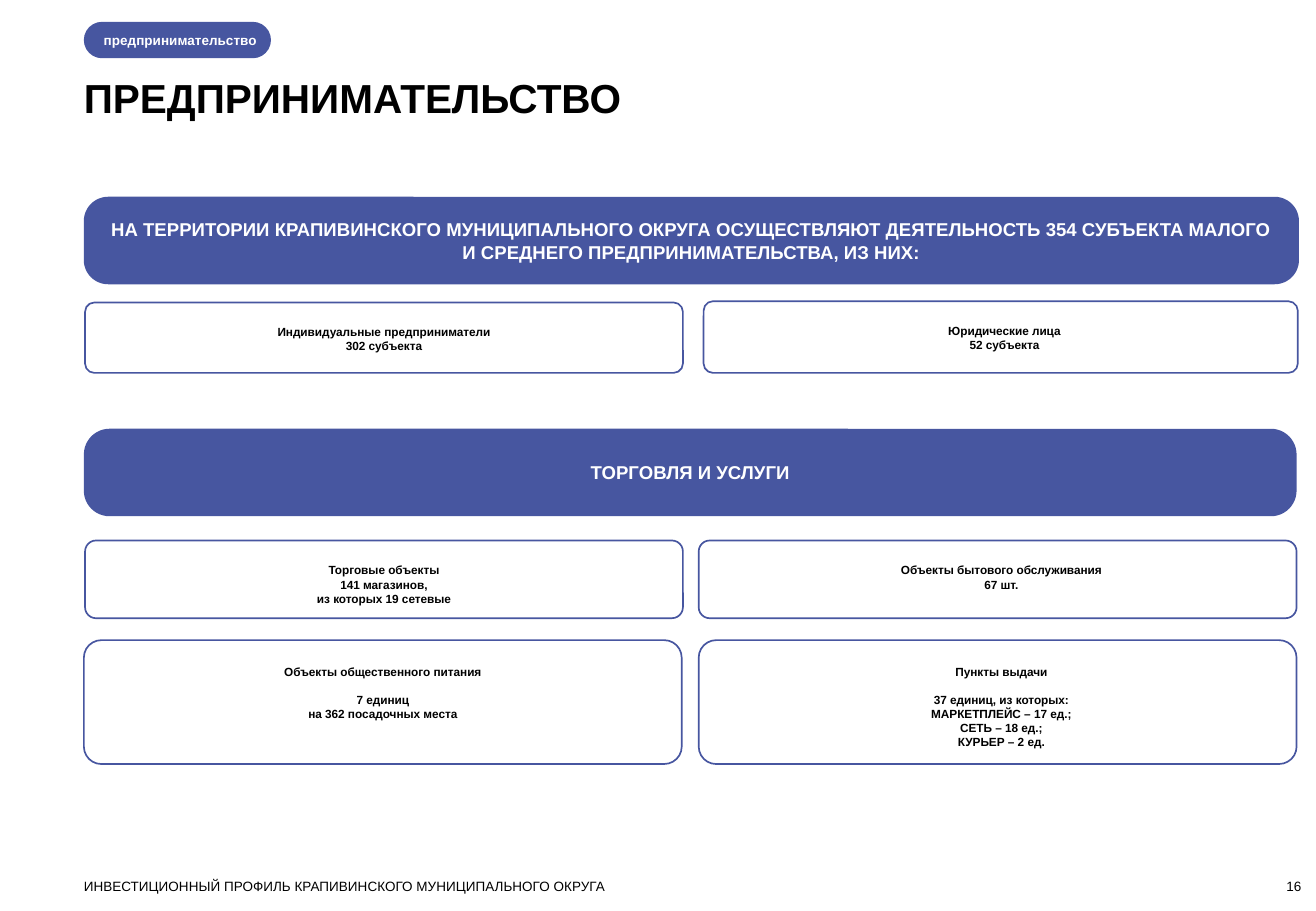
from pptx import Presentation
from pptx.dml.color import RGBColor
from pptx.enum.shapes import MSO_SHAPE
from pptx.enum.text import MSO_ANCHOR, PP_ALIGN
from pptx.util import Inches, Pt

COLORS = {"blue": "4756A0", "white": "FFFFFF", "black": "000000"}
LEFT = 0.69


def tint(name):
    return RGBColor.from_string(COLORS[name])


def write(shape, lines, size, color="black", bold=True, align=PP_ALIGN.LEFT,
          anchor=MSO_ANCHOR.TOP, pads=(0, 0, 0, 0), gap=0):
    frame = shape.text_frame
    frame.word_wrap = True
    frame.vertical_anchor = anchor
    (frame.margin_left, frame.margin_top,
     frame.margin_right, frame.margin_bottom) = map(Inches, pads)
    for i, line in enumerate(lines):
        para = frame.add_paragraph() if i else frame.paragraphs[0]
        para.alignment = align
        if i == 1 and gap:
            para.space_before = Pt(gap)
        run = para.add_run()
        run.text = line
        font = run.font
        font.name, font.size, font.bold = "Arial", Pt(size), bold
        font.color.rgb = tint(color)


def panel(slide, box, curve, filled):
    shape = slide.shapes.add_shape(MSO_SHAPE.ROUNDED_RECTANGLE, *map(Inches, box))
    shape.adjustments[0] = curve
    shape.shadow.inherit = False
    if filled:
        shape.fill.solid()
        shape.fill.fore_color.rgb = tint("blue")
        shape.line.fill.background()
    else:
        shape.fill.background()
        shape.line.color.rgb = tint("blue")
        shape.line.width = Pt(1)
    return shape


def label(slide, box, text, size, **style):
    write(slide.shapes.add_textbox(*map(Inches, box)), [text], size, **style)


def banner(slide, box, curve, text):
    write(panel(slide, box, curve, True), [text], 11, "white",
          align=PP_ALIGN.CENTER, anchor=MSO_ANCHOR.MIDDLE,
          pads=(0.1, 0.05, 0.1, 0.05))


def card(slide, box, curve, lines, right=0.16, gap=0):
    write(panel(slide, box, curve, False), lines, 7, align=PP_ALIGN.CENTER,
          pads=(0.16, 0.16, right, 0.05), gap=gap)


def header(slide, left, top):
    write(panel(slide, (left, top, 1.54, 0.3), 0.5, True),
          ["предпринимательство"], 8, "white",
          anchor=MSO_ANCHOR.MIDDLE, pads=(0.12, 0, 0, 0))
    label(slide, (left, top + 0.42, 10.02, 0.4), "ПРЕДПРИНИМАТЕЛЬСТВО", 24)


def firms(slide, left, top):
    banner(slide, (left, top, 10, 0.72), 0.277,
           "НА ТЕРРИТОРИИ КРАПИВИНСКОГО МУНИЦИПАЛЬНОГО ОКРУГА ОСУЩЕСТВЛЯЮТ "
           "ДЕЯТЕЛЬНОСТЬ 354 СУБЪЕКТА МАЛОГО И СРЕДНЕГО "
           "ПРЕДПРИНИМАТЕЛЬСТВА, ИЗ НИХ:")
    card(slide, (left + 0.01, top + 0.87, 4.92, 0.58), 0.132,
         ["Индивидуальные предприниматели", "302 субъекта"])
    card(slide, (left + 5.1, top + 0.86, 4.89, 0.59), 0.132,
         ["Юридические лица", "52 субъекта"], 0.1)


def trade(slide, left, top):
    banner(slide, (left, top, 9.98, 0.72), 0.293, "ТОРГОВЛЯ И УСЛУГИ")
    rows = [
        (0.92, 0.64, 0.01, 0,
         ["Торговые объекты", "141 магазинов,", "из которых 19 сетевые"],
         ["Объекты бытового обслуживания", "67 шт."]),
        (1.74, 1.02, 0, 8,
         ["Объекты общественного питания", "7 единиц",
          "на 362 посадочных места"],
         ["Пункты выдачи", "37 единиц, из которых:", "МАРКЕТПЛЕЙС – 17 ед.;",
          "СЕТЬ – 18 ед.;", "КУРЬЕР – 2 ед."]),
    ]
    for down, high, shift, gap, first, second in rows:
        card(slide, (left + shift, top + down, 4.92, high), 0.141, first, gap=gap)
        card(slide, (left + 5.06, top + down, 4.92, high), 0.141, second, 0.1, gap)


def footer(slide, left, top):
    label(slide, (left, top, 8, 0.13),
          "ИНВЕСТИЦИОННЫЙ ПРОФИЛЬ КРАПИВИНСКОГО МУНИЦИПАЛЬНОГО ОКРУГА",
          8, bold=False)
    label(slide, (left + 9.22, top, 0.8, 0.13), "16", 8, bold=False,
          align=PP_ALIGN.RIGHT, anchor=MSO_ANCHOR.BOTTOM)


def main():
    deck = Presentation()
    deck.slide_width, deck.slide_height = Inches(10.83), Inches(7.5)
    slide = deck.slides.add_slide(deck.slide_layouts[6])
    header(slide, LEFT, 0.18)
    firms(slide, LEFT, 1.62)
    trade(slide, LEFT, 3.53)
    footer(slide, LEFT, 7.23)
    deck.save("out.pptx")


if __name__ == "__main__":
    main()
